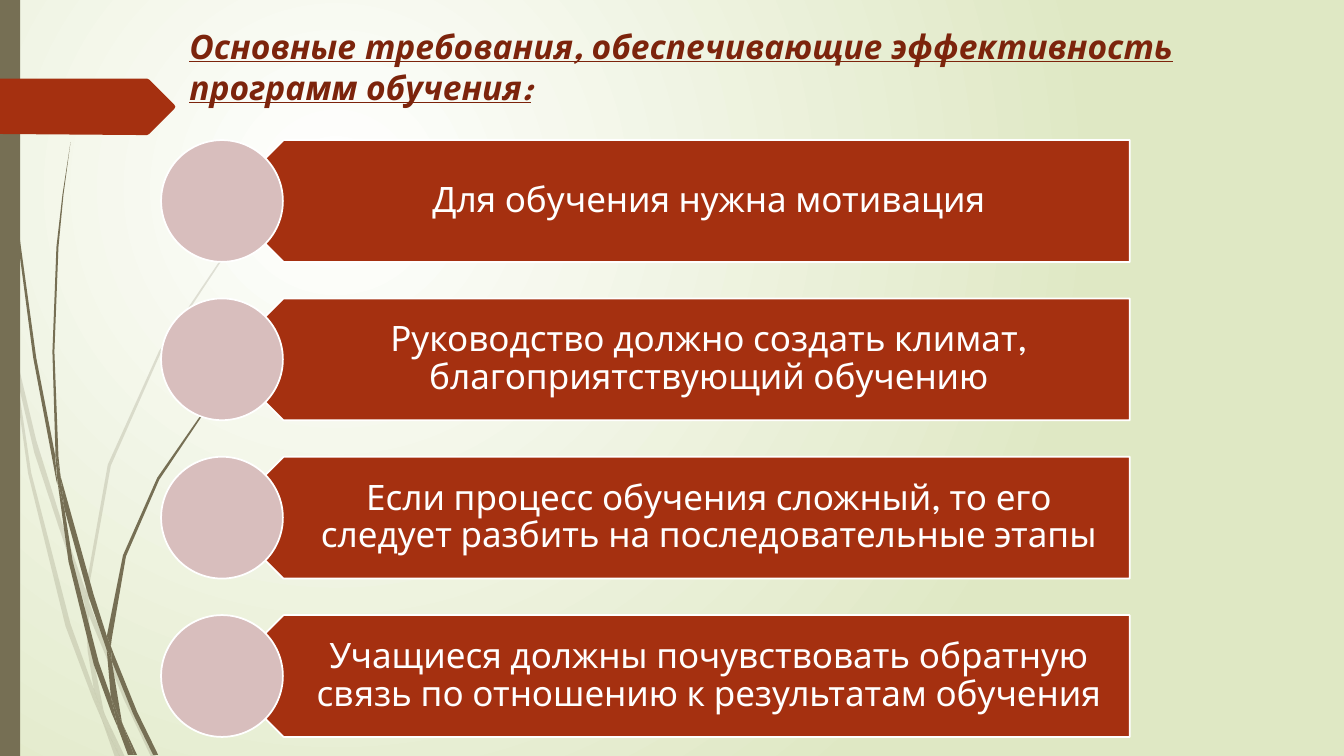
from lxml import etree
from pptx import Presentation
from pptx.dml.color import RGBColor
from pptx.enum import shapes, text
from pptx.oxml import ns
from pptx.util import Cm, Pt

COLORS = {"white": "FFFFFF", "pale green": "DFE8C4", "olive": "766F54",
          "rust": "A53010", "dark rust": "7C240C", "rose": "D8BEBD"}
FONT = "League Spartan"
TITLE = "Основные требования, обеспечивающие эффективность программ обучения:"
REQUIREMENTS = [
    "Для обучения нужна мотивация",
    "Руководство должно создать климат, благоприятствующий обучению",
    "Если процесс обучения сложный, то его следует разбить на последовательные этапы",
    "Учащиеся должны почувствовать обратную связь по отношению к результатам обучения",
]
ROW_TOP, ROW_STEP, ROW_HEIGHT = 3.53, 3.99, 3.07

# Outline points are in hundredths of an inch.
UNIT = Cm(0.0254)
PALE_STEMS = [
    [(11, 350), (9, 322), (0, 282), (0, 299), (10, 344)],
    [(58, 522), (84, 599), (85, 586), (62, 520), (36, 437), (14, 345), (17, 376), (34, 449)],
    [(92, 607), (88, 596), (88, 610), (123, 694), (150, 751), (155, 751), (127, 692)],
    [(119, 751), (124, 751), (105, 711)],
    [(93, 683), (70, 619), (31, 469), (17, 376), (11, 350), (28, 470), (65, 621),
     (92, 693), (101, 714), (99, 707)],
    [(84, 599), (87, 646), (93, 683), (96, 692), (105, 711), (103, 706), (91, 646),
     (88, 610), (88, 608)],
    [(88, 584), (110, 462), (160, 349), (229, 245), (268, 198), (290, 175), (312, 154),
     (312, 153), (289, 175), (268, 197), (228, 244), (158, 348), (107, 461), (85, 584),
     (85, 586), (88, 596)],
    [(101, 714), (114, 751), (119, 751)],
    [(88, 608), (88, 610), (88, 596), (85, 586), (84, 599)],
    [(96, 692), (93, 683), (99, 707), (101, 714), (119, 751), (105, 711)],
]
DARK_STEMS = [
    [(7, 110), (17, 233), (33, 355), (56, 477), (57, 481), (55, 457), (55, 453),
     (36, 355), (19, 232), (8, 109), (5, 48), (4, 0), (3, 0), (4, 48)],
    [(88, 592), (106, 645), (106, 633), (106, 631), (93, 590), (60, 472), (64, 505)],
    [(113, 649), (110, 641), (111, 656), (132, 708), (152, 749), (157, 749), (136, 706)],
    [(110, 691), (98, 657), (72, 556), (64, 505), (57, 477), (68, 557), (93, 659),
     (111, 708), (117, 722), (116, 717)],
    [(60, 472), (58, 453), (54, 349), (58, 245), (63, 193), (70, 141), (62, 193),
     (56, 245), (52, 349), (55, 449)],
    [(133, 749), (136, 749), (122, 719)],
    [(57, 477), (64, 505), (60, 472), (55, 449), (55, 453)],
    [(111, 633), (125, 552), (158, 476), (205, 406), (231, 374), (245, 359), (261, 344),
     (260, 344), (245, 358), (231, 373), (204, 405), (156, 474), (122, 551), (106, 631),
     (110, 641)],
    [(117, 722), (127, 749), (131, 749)],
    [(106, 645), (110, 691), (116, 706), (122, 719), (121, 716), (111, 656), (109, 651)],
    [(106, 645), (109, 651), (111, 656), (110, 641), (106, 631), (106, 633)],
    [(116, 706), (110, 691), (116, 717), (117, 722), (130, 749), (133, 749), (122, 719)],
]
POINTER = [(0, 78), (146, 78), (148, 79), (173, 104), (174, 106), (173, 108),
           (148, 133), (146, 134), (136, 134), (0, 133)]


def rgb(name):
    return RGBColor.from_string(COLORS[name])


def add_child(parent, tag, **attrs):
    return etree.SubElement(parent, ns.qn(tag), attrs)


def paint(sp, fill, line=None):
    sp.shadow.inherit = False
    sp.fill.solid()
    sp.fill.fore_color.rgb = rgb(fill)
    if line:
        sp.line.color.rgb = rgb(line)
        sp.line.width = Pt(1.25)
    else:
        sp.line.fill.background()


def add_preset(parent, kind, left, top, width, height, fill, line=None):
    sp = parent.shapes.add_shape(kind, Cm(left), Cm(top), Cm(width), Cm(height))
    paint(sp, fill, line)
    return sp


def add_outline(parent, points, fill):
    builder = parent.shapes.build_freeform(*points[0], scale=UNIT)
    builder.add_line_segments(points[1:], close=True)
    sp = builder.convert_to_shape()
    paint(sp, fill)
    return sp


def add_stems(s, outlines, opacity=None):
    group = s.shapes.add_group_shape()
    for points in outlines:
        sp = add_outline(group, points, "olive")
        if opacity:
            color = sp.element.spPr.find(ns.qn("a:solidFill"))[0]
            add_child(color, "a:alpha", val=str(opacity * 1000))


def write(sp, words, color, frame, paragraph, font):
    tf = sp.text_frame
    tf.text = words
    p = tf.paragraphs[0]
    r = p.runs[0]
    r.font.color.rgb = rgb(color)
    font = {"name": FONT, **font}
    for target, values in ((tf, frame), (p, paragraph), (r.font, font)):
        for name, value in values.items():
            setattr(target, name, value)


def set_background(s):
    """Fill the slide with a radial gradient centred in its upper left quarter."""
    fill = s.background.fill
    fill.gradient()
    for stop, color in zip(fill.gradient_stops, ("white", "pale green")):
        stop.color.rgb = rgb(color)
    grad = s.element.find(".//" + ns.qn("a:gradFill"))
    grad.remove(grad.find(ns.qn("a:lin")))
    radial = add_child(grad, "a:path", path="circle")
    add_child(radial, "a:fillToRect", l="50000", t="50000", r="100000", b="100000")


def set_title(s):
    sp = s.shapes.title
    sp.left, sp.top, sp.width, sp.height = Cm(4.52), Cm(0.53), Cm(29.35), Cm(2.31)
    write(sp, TITLE, "dark rust",
          {"word_wrap": True, "vertical_anchor": text.MSO_ANCHOR.TOP,
           "auto_size": text.MSO_AUTO_SIZE.SHAPE_TO_FIT_TEXT},
          {"alignment": text.PP_ALIGN.LEFT},
          {"size": Pt(24), "bold": True, "italic": True, "underline": True})


def add_requirement(group, words, top):
    kinds = shapes.MSO_SHAPE
    plate = add_preset(group, kinds.PENTAGON, 5.61, top, 22.86, ROW_HEIGHT, "rust", "white")
    plate.rotation = 180
    box = group.shapes.add_textbox(Cm(6.38), Cm(top), Cm(22.1), Cm(ROW_HEIGHT))
    write(box, words, "white",
          {"word_wrap": True, "vertical_anchor": text.MSO_ANCHOR.MIDDLE,
           "margin_left": Cm(1.35), "margin_right": Cm(0.48),
           "margin_top": Cm(0.25), "margin_bottom": Cm(0.25)},
          {"alignment": text.PP_ALIGN.CENTER, "line_spacing": 0.9},
          {"size": Pt(25)})
    add_preset(group, kinds.OVAL, 4.06, top, ROW_HEIGHT, ROW_HEIGHT, "rose", "white")


def main():
    prs = Presentation()
    prs.slide_width, prs.slide_height = Cm(33.87), Cm(19.05)
    s = prs.slides.add_slide(prs.slide_layouts.get_by_name("Title Only"))
    set_background(s)
    add_stems(s, PALE_STEMS, opacity=20)
    add_stems(s, DARK_STEMS)
    add_preset(s, shapes.MSO_SHAPE.RECTANGLE, 0, 0, 0.51, 19.05, "olive")
    add_outline(s, POINTER, "rust")
    set_title(s)
    group = s.shapes.add_group_shape()
    for i, words in enumerate(REQUIREMENTS):
        add_requirement(group, words, ROW_TOP + i * ROW_STEP)
    prs.save("out.pptx")


if __name__ == "__main__":
    main()
